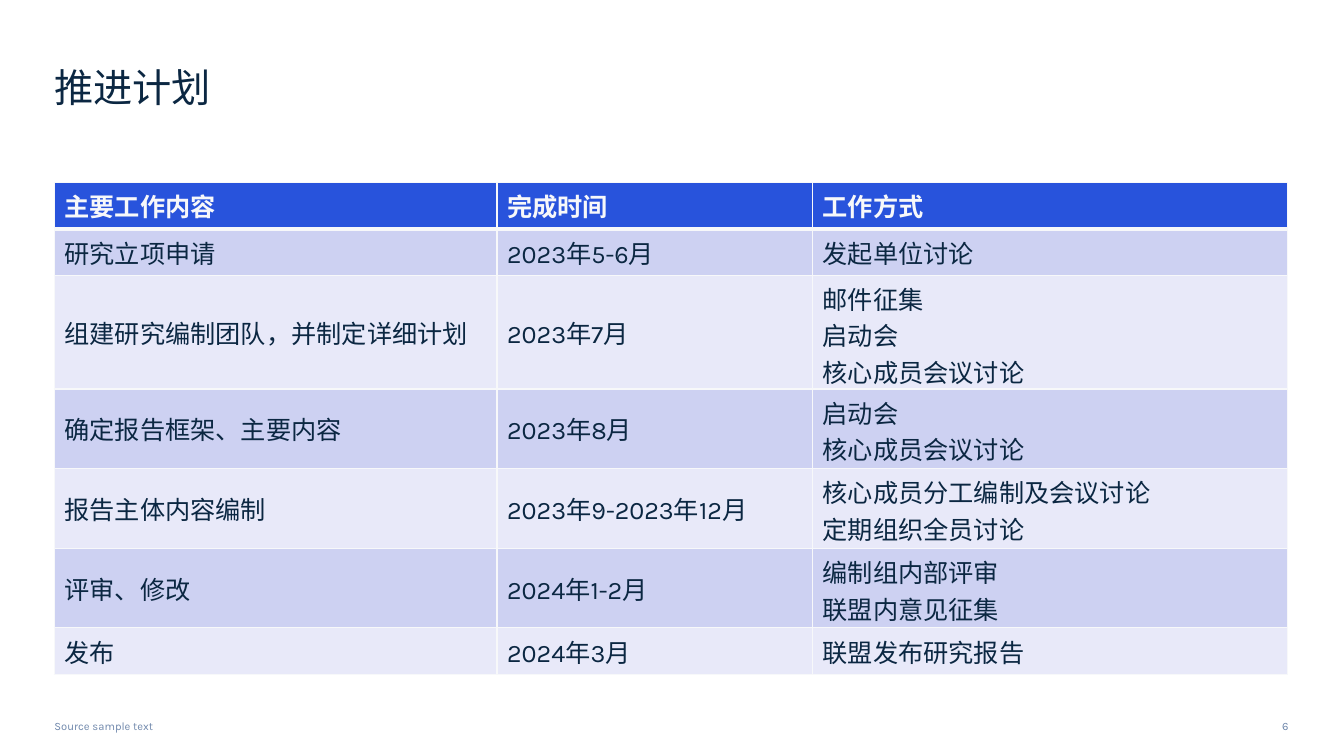
from lxml import etree
from pptx import Presentation
from pptx.dml.color import RGBColor
from pptx.enum.text import MSO_ANCHOR, PP_ALIGN
from pptx.oxml.ns import qn
from pptx.util import Inches, Pt

BOTTOM, MIDDLE, TOP = MSO_ANCHOR.BOTTOM, MSO_ANCHOR.MIDDLE, MSO_ANCHOR.TOP
LEFT, RIGHT = PP_ALIGN.LEFT, PP_ALIGN.RIGHT
FONT = "Karla"
COLORS = {
    "ink": "0B2742",
    "muted": "7088AC",
    "header": "2853DC",
    "odd": "CDD1F2",
    "even": "E8E9F9",
    "light": "F7F8FA",
}


def style_run(r, size, color, bold=False):
    for name, value in {"name": FONT, "size": Pt(size), "bold": bold}.items():
        setattr(r.font, name, value)
    r.font.color.rgb = RGBColor.from_string(COLORS[color])


def add_border(cell, side, width):
    tc_pr = cell._tc.get_or_add_tcPr()
    ln = etree.SubElement(tc_pr, qn(f"a:ln{side}"), w=str(Pt(width)))
    fill = etree.SubElement(ln, qn("a:solidFill"))
    etree.SubElement(fill, qn("a:srgbClr"), val=COLORS["light"])


prs = Presentation()
prs.slide_width, prs.slide_height = Inches(13.33), Inches(7.5)
s = prs.slides.add_slide(prs.slide_layouts[6])

texts = [
    ("6", (12.39, 7.12, 0.41, 0.16), 8, "muted", RIGHT, 1.25, 0, 0.02),
    ("Source sample text", (0.54, 7.14, 11.47, 0.13), 8, "muted", LEFT, 0.96, 2.2, 0),
    ("推进计划", (0.54, 0.7, 12.23, 0.4), 28, "ink", LEFT, 0.84, 0, 0),
]
for text, box, size, color, align, spacing, after, inset in texts:
    tf = s.shapes.add_textbox(*map(Inches, box)).text_frame
    frame = {
        "word_wrap": True,
        "vertical_anchor": BOTTOM,
        "margin_left": Inches(inset),
        "margin_right": Inches(inset),
        "margin_top": 0,
        "margin_bottom": Inches(inset / 2),
    }
    for name, value in frame.items():
        setattr(tf, name, value)
    p = tf.paragraphs[0]
    p.alignment, p.line_spacing, p.space_after = align, spacing, Pt(after)
    r = p.add_run()
    r.text = text
    style_run(r, size, color)

plan = [
    ("主要工作内容", "完成时间", "工作方式"),
    ("研究立项申请", "2023年5-6月", "发起单位讨论"),
    ("组建研究编制团队，并制定详细计划", "2023年7月", "邮件征集\n启动会\n核心成员会议讨论"),
    ("确定报告框架、主要内容", "2023年8月", "启动会\n核心成员会议讨论"),
    ("报告主体内容编制", "2023年9-2023年12月", "核心成员分工编制及会议讨论\n定期组织全员讨论"),
    ("评审、修改", "2024年1-2月", "编制组内部评审\n联盟内意见征集"),
    ("发布", "2024年3月", "联盟发布研究报告"),
]
col_widths = [4.39, 3.13, 4.71]
row_heights = [0.46, 0.46, 1.13, 0.79, 0.79, 0.79, 0.46]
table = s.shapes.add_table(
    len(plan), len(col_widths), Inches(0.54), Inches(1.81), Inches(12.23), Inches(4.88)
).table
for col, width in zip(table.columns, col_widths):
    col.width = Inches(width)
for row, height in zip(table.rows, row_heights):
    row.height = Inches(height)

for i, row in enumerate(plan):
    header = i == 0
    fill = "header" if header else "odd" if i % 2 else "even"
    for j, text in enumerate(row):
        cell = table.cell(i, j)
        for side in "LRTB":
            thick = (header and side == "B") or (i == 1 and side == "T")
            add_border(cell, side, 3 if thick else 1)
        cell.fill.solid()
        cell.fill.fore_color.rgb = RGBColor.from_string(COLORS[fill])
        cell.vertical_anchor = TOP if header else MIDDLE
        cell.text = text
        for p in cell.text_frame.paragraphs:
            style_run(p.runs[0], 18, "light" if header else "ink", header)

prs.save("out.pptx")
